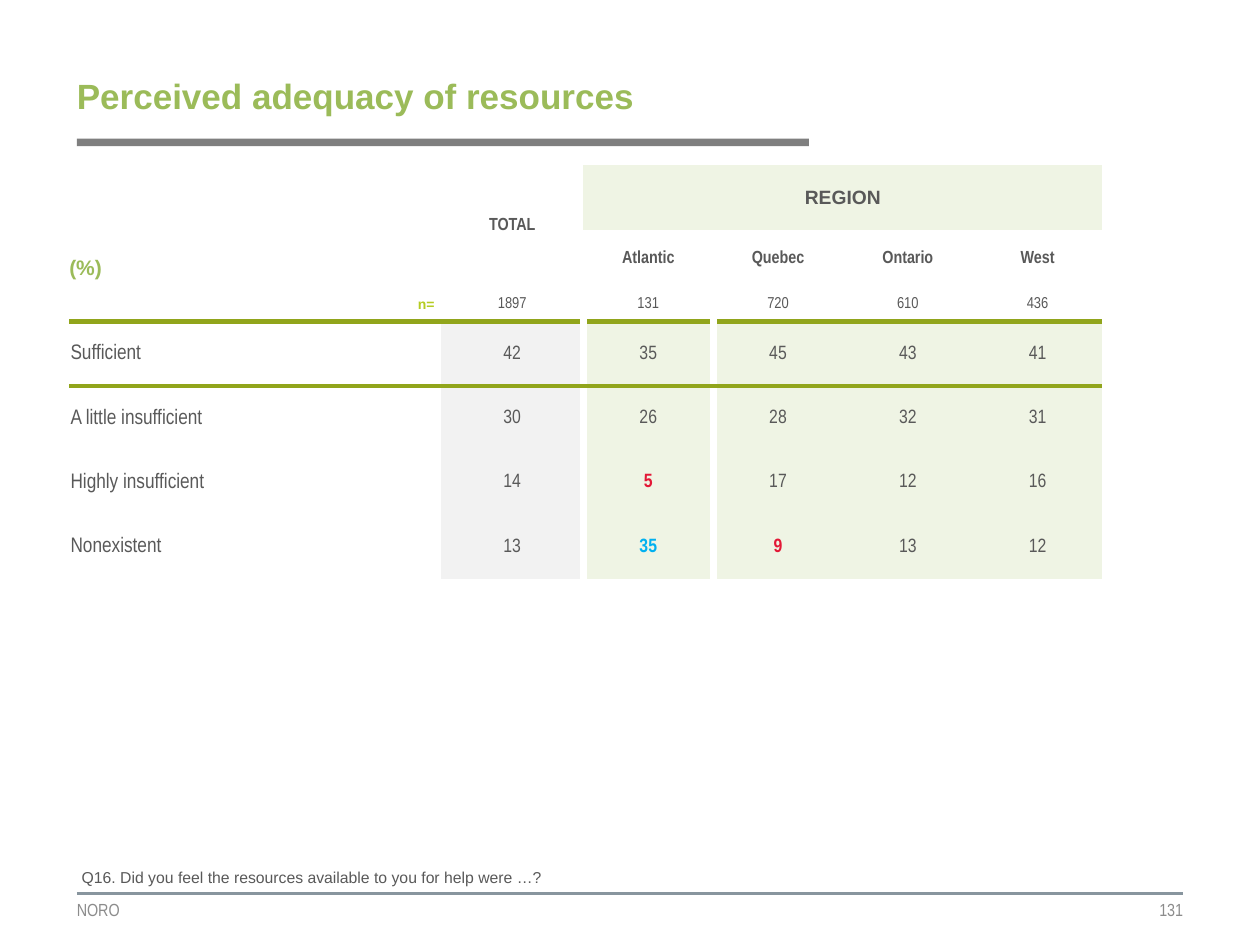
from dataclasses import dataclass

from lxml.etree import SubElement
from pptx import Presentation
from pptx.dml.color import RGBColor
from pptx.enum.shapes import MSO_CONNECTOR, MSO_SHAPE
from pptx.enum.text import MSO_ANCHOR, PP_ALIGN
from pptx.oxml.ns import qn
from pptx.util import Inches, Pt


@dataclass(frozen=True)
class Theme:
    sans: str = "Arial"
    narrow: str = "Arial Narrow"
    text: str = "595959"
    muted: str = "8C8C8C"
    accent: str = "9BBB59"
    lime: str = "B5CC22"
    rule: str = "91A51B"
    bar: str = "7F7F7F"
    footer_rule: str = "88959E"
    total_fill: str = "F2F2F2"
    region_fill: str = "EFF4E4"
    low: str = "E31836"
    high: str = "00B0F0"
    white: str = "FFFFFF"
    title_size: int = 20
    label_size: int = 12
    value_size: int = 11
    head_size: int = 10
    note_size: int = 9
    tiny_size: int = 8


THEME = Theme()
NO_STYLE_NO_GRID = "{2D5ABB26-0587-4C30-8999-92F81FD0307C}"

REGIONS = ["Atlantic", "Quebec", "Ontario", "West"]
SAMPLE_SIZES = [1897, 131, 720, 610, 436]
ANSWERS = [
    ("Sufficient", [42, 35, 45, 43, 41]),
    ("A little insufficient", [30, 26, 28, 32, 31]),
    ("Highly insufficient", [14, 5, 17, 12, 16]),
    ("Nonexistent", [13, 35, 9, 13, 12]),
]
# Significant differences: (answer, column) -> colour
HIGHLIGHTS = {(2, 1): THEME.low, (3, 1): THEME.high, (3, 2): THEME.low}


def write(frame, text, size, color=THEME.text, font=THEME.narrow, bold=False,
          align=PP_ALIGN.LEFT):
    para = frame.paragraphs[0]
    para.alignment = align
    span = para.add_run()
    span.text = text
    span.font.name = font
    span.font.size = Pt(size)
    span.font.bold = bold
    span.font.color.rgb = RGBColor.from_string(color)
    return para


def add_text(page, box, text, size, inset=0, **style):
    frame = page.shapes.add_textbox(*map(Inches, box)).text_frame
    frame.word_wrap = True
    frame.vertical_anchor = MSO_ANCHOR.MIDDLE
    frame.margin_left = frame.margin_right = Inches(inset)
    frame.margin_top = frame.margin_bottom = Inches(inset / 2)
    write(frame, text, size, **style)


def add_heading(page, box):
    """Title with a grey bar along the bottom of the box."""
    left, top, width, height = box
    add_text(page, (left, top, width, height), "Perceived adequacy of resources",
             THEME.title_size, color=THEME.accent, font=THEME.sans, bold=True)
    bar = page.shapes.add_shape(MSO_SHAPE.RECTANGLE, Inches(left), Inches(top + height),
                                Inches(5.81), Inches(0.06))
    bar.shadow.inherit = False
    bar.fill.solid()
    bar.fill.fore_color.rgb = RGBColor.from_string(THEME.bar)
    bar.line.fill.background()


def add_footer(page, box):
    """Rule, source name, page number, and the question above the rule."""
    left, top, width, height = box
    rule = page.shapes.add_connector(MSO_CONNECTOR.STRAIGHT, Inches(left), Inches(top),
                                     Inches(left + width), Inches(top))
    rule.line.color.rgb = RGBColor.from_string(THEME.footer_rule)
    rule.line.width = Pt(1.5)
    SubElement(rule._element.spPr, qn("a:effectLst"))
    half = 2.84
    add_text(page, (left, top, half, height), "NORO", THEME.head_size, color=THEME.muted)
    add_text(page, (left + width - half, top, half, height), "131", THEME.head_size,
             color=THEME.muted, align=PP_ALIGN.RIGHT)
    add_text(page, (left - 0.06, top - 0.25, 8.55, 0.25),
             "Q16. Did you feel the resources available to you for help were …?",
             THEME.note_size, inset=0.1, font=THEME.sans)


def add_borders(cell, **edges):
    """Draw edges given as L, R, T or B = (colour, points)."""
    properties = cell._tc.get_or_add_tcPr()
    for side in "LRTB":
        if side in edges:
            color, points = edges[side]
            line = SubElement(properties, qn(f"a:ln{side}"), w=str(Pt(points)))
            SubElement(SubElement(line, qn("a:solidFill")), qn("a:srgbClr"), val=color)


def paint(cell, color):
    cell.fill.solid()
    cell.fill.fore_color.rgb = RGBColor.from_string(color)


def fill_header(table):
    centered = {"align": PP_ALIGN.CENTER}
    for first, last in [((0, 1), (2, 1)), ((0, 2), (1, 5)), ((1, 0), (2, 0))]:
        table.cell(*first).merge(table.cell(*last))

    write(table.cell(0, 1).text_frame, "TOTAL", THEME.head_size, bold=True, **centered)
    write(table.cell(0, 2).text_frame, "REGION", THEME.value_size, font=THEME.sans,
          bold=True, **centered)
    paint(table.cell(0, 2), THEME.region_fill)
    for column, region in enumerate(REGIONS, 2):
        write(table.cell(2, column).text_frame, region, THEME.head_size, bold=True, **centered)

    # Unit and sample-size labels
    unit, sample = table.cell(1, 0), table.cell(3, 0)
    unit.vertical_anchor = MSO_ANCHOR.BOTTOM
    unit.margin_left, unit.margin_bottom = 0, Inches(0.05)
    sample.margin_right = Inches(0.05)
    write(unit.text_frame, "(%)", THEME.label_size, color=THEME.accent, font=THEME.sans,
          bold=True).line_spacing = 0.95
    write(sample.text_frame, "n=", THEME.tiny_size, color=THEME.lime, font=THEME.sans,
          bold=True, align=PP_ALIGN.RIGHT).line_spacing = 0.95
    for column, size in enumerate(SAMPLE_SIZES, 1):
        write(table.cell(3, column).text_frame, str(size), THEME.note_size, **centered)
    for column in range(len(SAMPLE_SIZES) + 1):
        add_borders(table.cell(3, column), B=(THEME.rule, 3))


def fill_answers(table, first_row):
    gap = (THEME.white, 4.5)
    for index, (label, values) in enumerate(ANSWERS):
        row = first_row + index
        top = {"T": (THEME.rule, 3)} if index == 0 else {}
        write(table.cell(row, 0).text_frame, label, THEME.label_size)
        add_borders(table.cell(row, 0), **top)
        for column, value in enumerate(values):
            cell = table.cell(row, column + 1)
            color = HIGHLIGHTS.get((index, column))
            write(cell.text_frame, str(value), THEME.value_size, color=color or THEME.text,
                  bold=color is not None, align=PP_ALIGN.CENTER)
            sides = {0: {"R": gap}, 1: {"L": gap}}.get(column, {})
            add_borders(cell, **sides, **top)
            paint(cell, THEME.total_fill if column == 0 else THEME.region_fill)


def add_results(page, box):
    widths = [2.95, 1.13] + [1.03] * len(REGIONS)
    heights = [0.32, 0.19, 0.45, 0.28] + [0.51] * len(ANSWERS)
    frame = page.shapes.add_table(len(heights), len(widths), *map(Inches, box))
    table = frame.table
    table.first_row = table.horz_banding = False
    for style in frame._element.iter(qn("a:tableStyleId")):
        style.text = NO_STYLE_NO_GRID
    for column, width in zip(table.columns, widths):
        column.width = Inches(width)
    for row, height in zip(table.rows, heights):
        row.height = Inches(height)
    for cell in table.iter_cells():
        cell.vertical_anchor = MSO_ANCHOR.MIDDLE
        cell.margin_left = cell.margin_right = cell.margin_top = Inches(0.01)
        cell.margin_bottom = 0
    fill_header(table)
    fill_answers(table, len(heights) - len(ANSWERS))
    # Small type in empty cells keeps the header rows low
    for cell in table.iter_cells():
        if not cell.text_frame.text:
            SubElement(cell.text_frame.paragraphs[0]._p, qn("a:endParaRPr"),
                       sz=str(THEME.tiny_size * 100))


def main():
    deck = Presentation()
    deck.slide_width, deck.slide_height = Inches(10), Inches(7.5)
    page = deck.slides.add_slide(deck.slide_layouts[6])
    add_heading(page, (0.61, 0.41, 7.15, 0.69))
    add_results(page, (0.55, 1.31, 8.2, 3.28))
    add_footer(page, (0.61, 7.09, 8.78, 0.26))
    deck.save("out.pptx")


if __name__ == "__main__":
    main()
